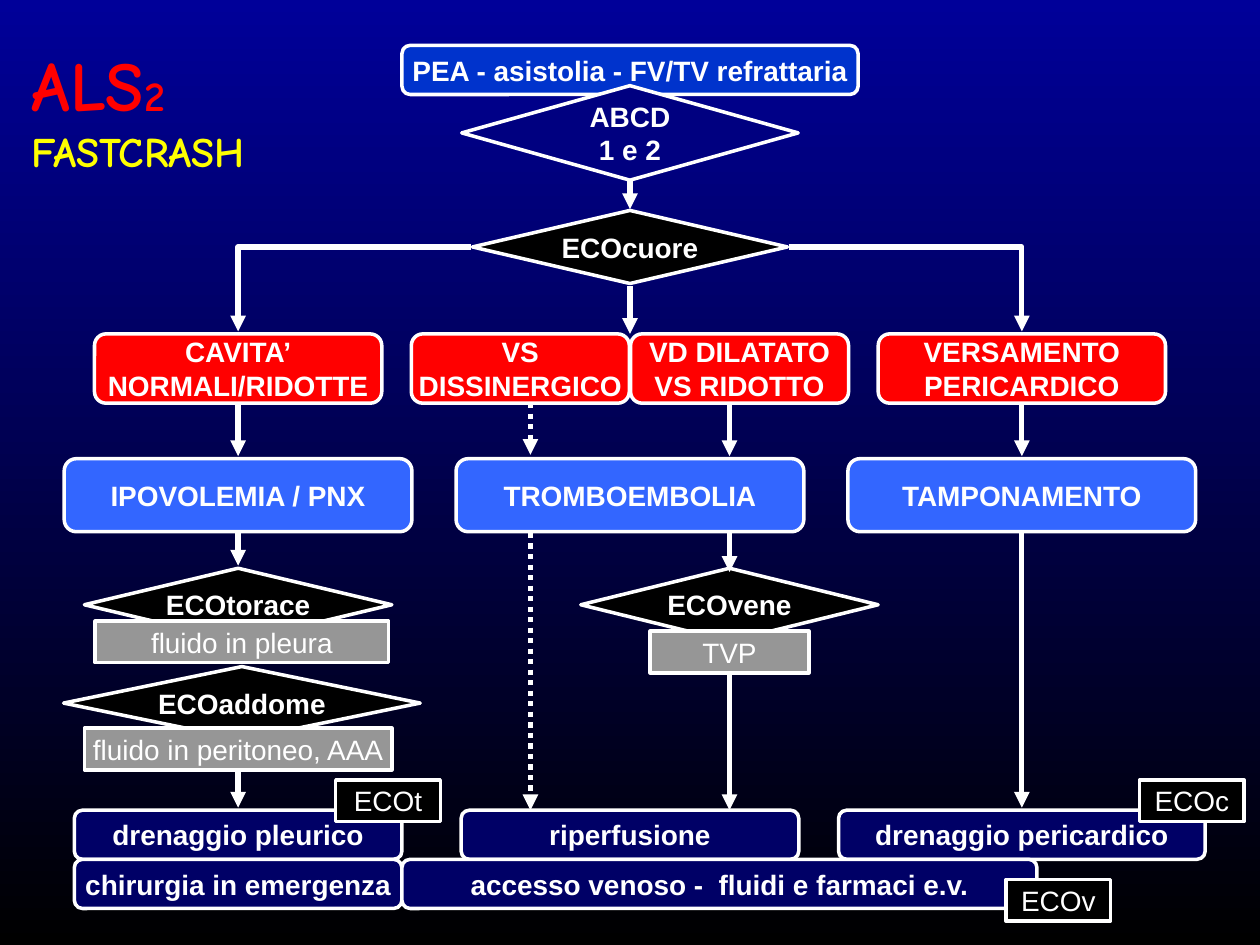
"""Builds the ALS 2 FASTCRASH ultrasound decision flowchart slide."""
import pptx
import pptx.dml.color
import pptx.enum.dml
import pptx.enum.shapes
import pptx.enum.text
import pptx.oxml.ns
import pptx.util
from lxml import etree

SHAPES = pptx.enum.shapes.MSO_SHAPE
CONNECTORS = pptx.enum.shapes.MSO_CONNECTOR
qn = pptx.oxml.ns.qn

COLORS = {
    "top": "000099", "black": "000000", "white": "FFFFFF", "start": "0033CC",
    "check": "000080", "finding": "FF0000", "diagnosis": "3366FF",
    "result": "969696", "action": "000066", "title": "FF0000", "subtitle": "FFFF00",
}
SLIDE_SIZE = (10, 7.5)
COLUMNS = {"left": 1.89, "dotted": 4.21, "mid": 5, "veins": 5.79, "right": 8.11}
ROWS = {"start": 0.36, "check": 0.68, "heart": 1.67, "finding": 2.65, "diagnosis": 3.64,
        "exam": 4.51, "abdomen": 5.29, "tag": 6.19, "action": 6.43, "access": 6.82}

TITLE = [("ALS", 40, "title"), ("2 ", 24, "title"), ("FASTCRASH", 24, "subtitle")]

KINDS = {
    "start": (SHAPES.FLOWCHART_ALTERNATE_PROCESS, "start", 0.39, True),
    "check": (SHAPES.FLOWCHART_DECISION, "check", 0.75, True),
    "exam": (SHAPES.FLOWCHART_DECISION, "black", 0.58, True),
    "finding": (SHAPES.FLOWCHART_ALTERNATE_PROCESS, "finding", 0.55, True),
    "diagnosis": (SHAPES.FLOWCHART_ALTERNATE_PROCESS, "diagnosis", 0.58, True),
    "result": (SHAPES.FLOWCHART_PROCESS, "result", 0.33, False),
    "action": (SHAPES.FLOWCHART_ALTERNATE_PROCESS, "action", 0.39, True),
    "tag": (SHAPES.FLOWCHART_PROCESS, "black", 0.33, False),
}

DECISIONS = [
    ("start", ["PEA - asistolia - FV/TV refrattaria"], "mid", "start", 3.62),
    ("exam", ["ECOcuore"], "mid", "heart", 2.5),
    ("check", ["ABCD", "1 e 2"], "mid", "check", 2.67),
    ("exam", ["ECOtorace"], "left", "exam", 2.44),
    ("exam", ["ECOaddome"], 1.92, "abdomen", 2.83),
    ("exam", ["ECOvene"], "veins", "exam", 2.36),
]
STEPS = [
    ("finding", ["CAVITA’", "NORMALI/RIDOTTE"], "left", "finding", 2.28),
    ("finding", ["VERSAMENTO", "PERICARDICO"], "right", "finding", 2.28),
    ("finding", ["VS", "DISSINERGICO"], 4.13, "finding", 1.73),
    ("finding", ["VD DILATATO", "VS RIDOTTO"], 5.87, "finding", 1.73),
    ("diagnosis", ["IPOVOLEMIA / PNX"], "left", "diagnosis", 2.76),
    ("diagnosis", ["TROMBOEMBOLIA"], "mid", "diagnosis", 2.76),
    ("diagnosis", ["TAMPONAMENTO"], "right", "diagnosis", 2.76),
    ("result", ["fluido in pleura"], 1.92, 4.93, 2.33),
    ("result", ["fluido in peritoneo, AAA"], "left", 5.78, 2.44),
    ("result", ["TVP"], "veins", 5.01, 1.26),
    ("action", ["drenaggio pleurico"], "left", "action", 2.6),
    ("action", ["riperfusione"], "mid", "action", 2.68),
    ("action", ["drenaggio pericardico"], "right", "action", 2.91),
    ("action", ["chirurgia in emergenza"], "left", "access", 2.6),
    ("action", ["accesso venoso -  fluidi e farmaci e.v."], 5.71, "access", 5.04),
    ("tag", ["ECOt"], 3.08, "tag", 0.83),
    ("tag", ["ECOc"], 9.46, "tag", 0.83),
    ("tag", ["ECOv"], 8.4, 6.98, 0.83),
]
DOWN_ARROWS = {
    "left": [(3.21, 3.62), (3.76, 4.49), (6.11, 6.41)],
    "dotted": [(3.2, 3.61), (4.23, 6.43)],
    "mid": [(1.43, 1.66), (2.27, 2.65)],
    "veins": [(3.21, 3.62), (4.22, 4.54), (5.35, 6.43)],
    "right": [(3.21, 3.62), (4.06, 6.41)],
}
BRANCHES = [(3.74, "left"), (6.26, "right")]
BRANCH_ROWS = (1.96, 2.63)


def rgb(name):
    return pptx.dml.color.RGBColor.from_string(COLORS[name])


def inches(*lengths):
    return [pptx.util.Inches(length) for length in lengths]


def add_run(paragraph, wording, size, color, face, bold):
    run = paragraph.add_run()
    run.text = wording
    run.font.size = pptx.util.Pt(size)
    run.font.name = face
    run.font.bold = bold
    run.font.color.rgb = rgb(color)


def clear_margins(frame):
    frame.margin_left = frame.margin_right = frame.margin_top = frame.margin_bottom = 0


def add_step(slide, kind, lines, column, row, width):
    preset, fill, height, bold = KINDS[kind]
    center, top = COLUMNS.get(column, column), ROWS.get(row, row)
    step = slide.shapes.add_shape(preset, *inches(center - width / 2, top, width, height))
    step.shadow.inherit = False
    step.fill.solid()
    step.fill.fore_color.rgb = rgb(fill)
    step.line.color.rgb = rgb("white")
    step.line.width = pptx.util.Pt(2)
    frame = step.text_frame
    frame.word_wrap = kind in ("check", "exam", "diagnosis")
    frame.vertical_anchor = pptx.enum.text.MSO_ANCHOR.MIDDLE
    clear_margins(frame)
    for index, line in enumerate(lines):
        paragraph = frame.add_paragraph() if index else frame.paragraphs[0]
        paragraph.alignment = pptx.enum.text.PP_ALIGN.CENTER
        add_run(paragraph, line, 16, "white", "Arial", bold)


def add_arrow(slide, route, start, end, dotted=False):
    arrow = slide.shapes.add_connector(route, *inches(*start, *end))
    arrow.line.color.rgb = rgb("white")
    arrow.line.width = pptx.util.Pt(3)
    if dotted:
        arrow.line.dash_style = pptx.enum.dml.MSO_LINE.ROUND_DOT
    properties = arrow._element.spPr
    if route == CONNECTORS.ELBOW:
        properties.find(qn("a:prstGeom")).set("prst", "bentConnector2")
    etree.SubElement(properties.find(qn("a:ln")), qn("a:tailEnd"), type="triangle")
    etree.SubElement(properties, qn("a:effectLst"))


def add_title(slide):
    title = slide.shapes.add_textbox(*inches(0.25, 0.33, 2.75, 1.07))
    title.text_frame.word_wrap = True
    clear_margins(title.text_frame)
    for wording, size, color in TITLE:
        add_run(title.text_frame.paragraphs[0], wording, size, color, "Comic Neue", True)


def main():
    deck = pptx.Presentation()
    deck.slide_width, deck.slide_height = inches(*SLIDE_SIZE)
    slide = deck.slides.add_slide(deck.slide_layouts[6])
    backdrop = slide.background.fill
    backdrop.gradient()
    backdrop.gradient_angle = 270
    for stop, color in zip(backdrop.gradient_stops, ("top", "black")):
        stop.color.rgb = rgb(color)

    for decision in DECISIONS:
        add_step(slide, *decision)
    for column, spans in DOWN_ARROWS.items():
        x = COLUMNS[column]
        for top, bottom in spans:
            add_arrow(slide, CONNECTORS.STRAIGHT, (x, top), (x, bottom), column == "dotted")
    for x, column in BRANCHES:
        add_arrow(slide, CONNECTORS.ELBOW, (x, BRANCH_ROWS[0]), (COLUMNS[column], BRANCH_ROWS[1]))
    for step in STEPS:
        add_step(slide, *step)
    add_title(slide)
    deck.save("out.pptx")


if __name__ == "__main__":
    main()
